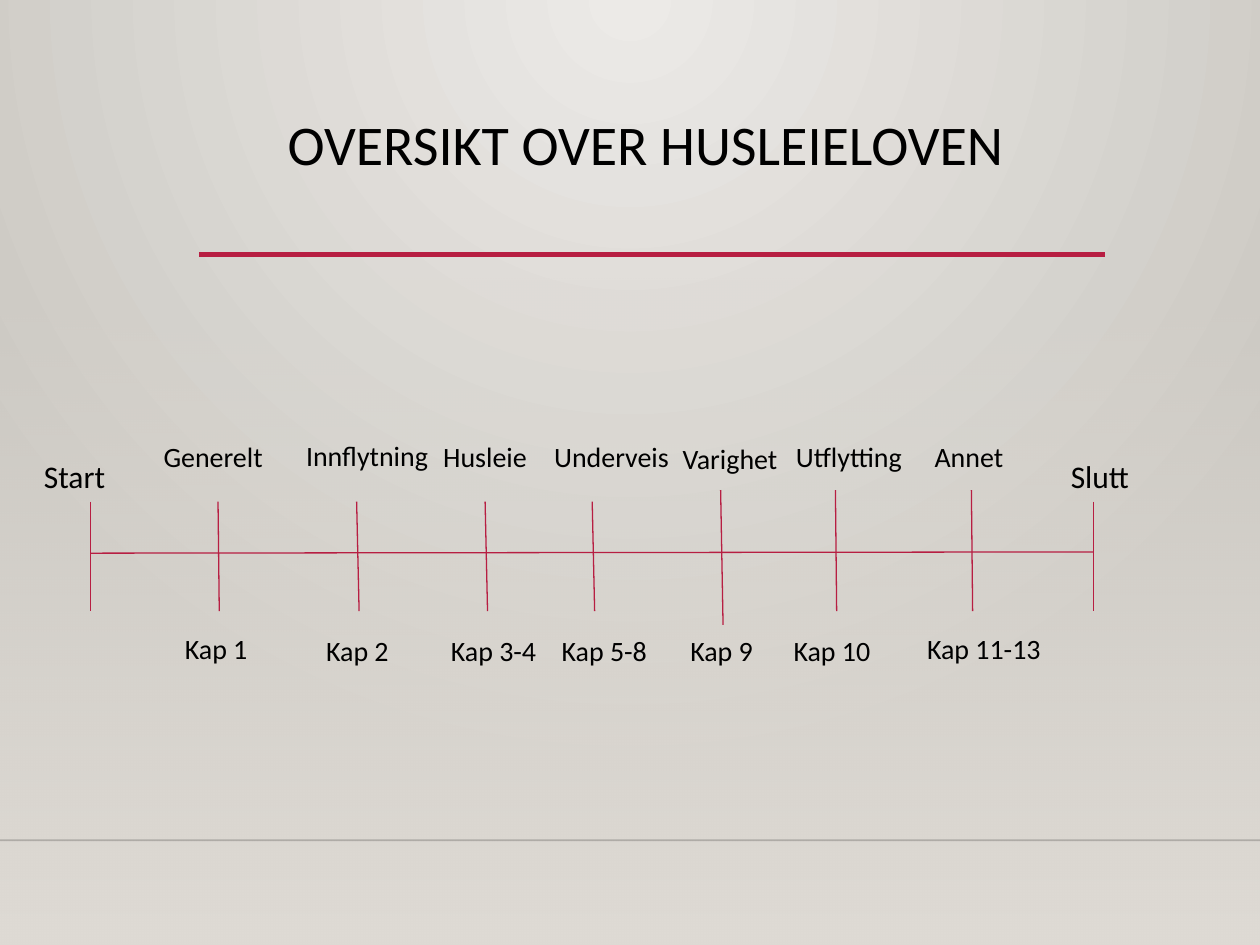
from lxml.etree import SubElement
from pptx import Presentation
from pptx.dml.color import RGBColor
from pptx.enum.shapes import MSO_CONNECTOR as Connector, MSO_SHAPE as Shape
from pptx.enum.text import MSO_ANCHOR as Anchor, MSO_AUTO_SIZE as AutoSize, PP_ALIGN as Align
from pptx.oxml.ns import qn
from pptx.util import Pt

COLORS = {
    "text": "000000",
    "accent": "B71E42",
    "rule": "000001",
    "glow": "ECEAE7",
    "edge": "CAC7C1",
    "floor": "DFDBD5",
}
FONT = "Calibri"
WIDTH, HEIGHT = 720, 540
TICK_TOP, TICK_BOTTOM = 286.6, 349.2
HIGH_TICK_TOP, LOW_TICK_BOTTOM = 280.1, 357.1
START_X, END_X = 51.8, 625

# Ticks: x at the top, slant to the right, top, bottom
TICKS = [
    (START_X, 0, TICK_TOP, TICK_BOTTOM),
    (END_X, 0, TICK_TOP, TICK_BOTTOM),
    (124.6, 0.7, TICK_TOP, TICK_BOTTOM),
    (203.8, 1.4, TICK_TOP, TICK_BOTTOM),
    (277.2, 1.4, TICK_TOP, TICK_BOTTOM),
    (338.4, 1.4, TICK_TOP, TICK_BOTTOM),
    (411.8, 1.4, HIGH_TICK_TOP, LOW_TICK_BOTTOM),
    (477.4, 0.7, HIGH_TICK_TOP, TICK_BOTTOM),
    (555.1, 0.7, HIGH_TICK_TOP, TICK_BOTTOM),
]

# Labels: text, left, top, width
ENDS = [("Start", 18, 257.8, 64.8), ("Slutt", 604.8, 257.8, 54.7)]
TOPICS = [
    ("Generelt", 86.4, 247.7, 78.5),
    ("Innflytning", 167.8, 247, 104.4),
    ("Husleie", 246.2, 247.7, 69.1),
    ("Underveis", 309.6, 247.7, 82.1),
    ("Varighet", 383, 248.9, 75.6),
    ("Utflytting", 447.8, 247.7, 79.2),
    ("Annet", 527, 247.7, 67),
]
CHAPTERS = [
    ("Kap 1", 98.6, 357.1, 80.6),
    ("Kap 2", 179.3, 358.6, 59),
    ("Kap 3-4", 250.6, 358.6, 68.4),
    ("Kap 5-8", 313.9, 358.6, 69.8),
    ("Kap 9", 387.4, 358.6, 67.7),
    ("Kap 10", 446.4, 358.6, 76.3),
    ("Kap 11-13", 522.7, 357.1, 83.5),
]


def rgb(name):
    return RGBColor.from_string(COLORS[name])


def set_alpha(color_element, percent):
    SubElement(color_element, qn("a:alpha"), val=str(percent * 1000))


def set_gradient(fill, first, last):
    fill.gradient()
    for stop, name in zip(fill.gradient_stops, (first, last)):
        stop.color.rgb = rgb(name)


def set_background(slide):
    set_gradient(slide.background.fill, "glow", "edge")
    gradient = slide.element.find(".//" + qn("a:gradFill"))
    gradient.remove(gradient.find(qn("a:lin")))
    circle = SubElement(gradient, qn("a:path"), path="circle")
    SubElement(circle, qn("a:fillToRect"), l="43000", t="0", r="43000", b="100000")


def add_floor(slide):
    top = 158.4
    shape = slide.shapes.add_shape(Shape.RECTANGLE, 0, Pt(top), Pt(WIDTH), Pt(HEIGHT - top))
    shape.shadow.inherit = False
    shape.line.fill.background()
    set_gradient(shape.fill, "floor", "floor")
    shape.fill.gradient_angle = 270
    set_alpha(shape.element.find(".//" + qn("a:srgbClr")), 0)


def add_line(slide, x1, y1, x2, y2, color="accent", width=0.75):
    line = slide.shapes.add_connector(Connector.STRAIGHT, Pt(x1), Pt(y1), Pt(x2), Pt(y2))
    line.line.color.rgb = rgb(color)
    line.line.width = Pt(width)
    SubElement(line.element.spPr, qn("a:effectLst"))
    return line


def set_font(paragraph, size):
    paragraph.font.name = FONT
    paragraph.font.size = Pt(size)
    paragraph.font.color.rgb = rgb("text")


def set_title(slide, text):
    title = slide.shapes.title
    title.left, title.top, title.width, title.height = Pt(113.8), Pt(63.4), Pt(517.7), Pt(82.8)
    frame = title.text_frame
    frame.text = text
    frame.vertical_anchor = Anchor.TOP
    frame.auto_size = AutoSize.NONE
    paragraph = frame.paragraphs[0]
    paragraph.alignment = Align.CENTER
    paragraph.line_spacing = 0.9
    set_font(paragraph, 32)


def add_label(slide, text, left, top, width, size=16):
    height = 29 if size == 18 else 26.6
    box = slide.shapes.add_textbox(Pt(left), Pt(top), Pt(width), Pt(height))
    frame = box.text_frame
    frame.word_wrap = True
    frame.auto_size = AutoSize.SHAPE_TO_FIT_TEXT
    frame.text = text
    set_font(frame.paragraphs[0], size)


def main():
    presentation = Presentation()
    presentation.slide_width, presentation.slide_height = Pt(WIDTH), Pt(HEIGHT)
    slide = presentation.slides.add_slide(presentation.slide_layouts[5])

    # Backdrop
    set_background(slide)
    add_floor(slide)
    floor_rule = add_line(slide, 0, 480.2, WIDTH, 480.2, "rule", 1)
    set_alpha(floor_rule.element.find(".//" + qn("a:srgbClr")), 20)

    # Title and its underline
    add_line(slide, 113.8, 145.4, 631.4, 145.4, width=2.5)
    set_title(slide, "OVERSIKT OVER HUSLEIELOVEN ")

    # Timeline
    add_line(slide, START_X, 316.1, END_X, 315.4)
    for x, slant, top, bottom in TICKS:
        add_line(slide, x, top, x + slant, bottom)

    # Labels
    for label in ENDS:
        add_label(slide, *label, size=18)
    for label in TOPICS + CHAPTERS:
        add_label(slide, *label)

    presentation.save("out.pptx")


if __name__ == "__main__":
    main()
